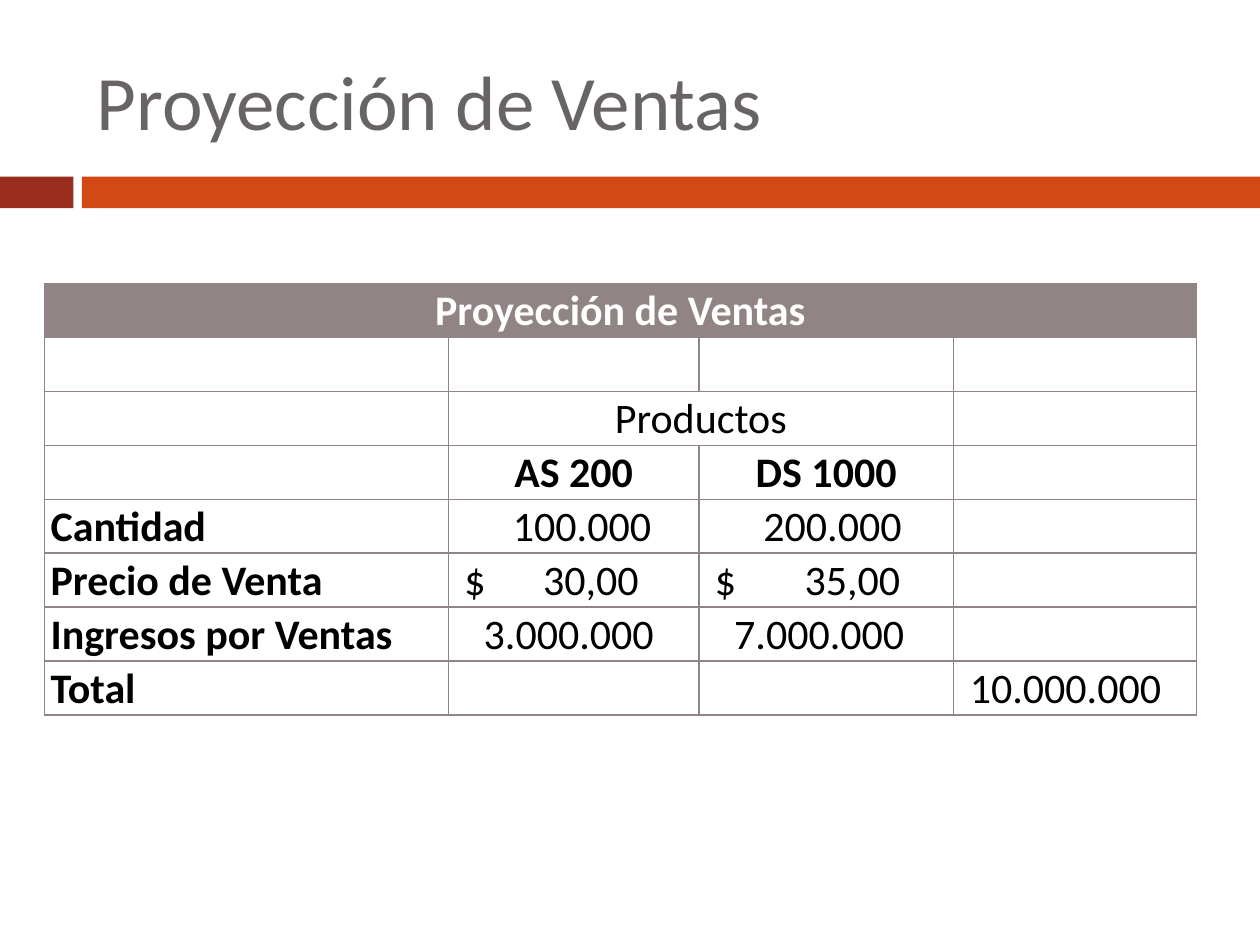
from dataclasses import dataclass

from lxml import etree
from pptx import Presentation
from pptx.dml.color import RGBColor
from pptx.enum.shapes import MSO_SHAPE
from pptx.enum.text import MSO_ANCHOR, PP_ALIGN
from pptx.oxml.ns import qn
from pptx.util import Cm, Pt

RECT = MSO_SHAPE.RECTANGLE
MIDDLE, BOTTOM = MSO_ANCHOR.MIDDLE, MSO_ANCHOR.BOTTOM
LEFT, CENTER = PP_ALIGN.LEFT, PP_ALIGN.CENTER


@dataclass(frozen=True)
class Theme:
    """Hold the colours, font and type sizes."""
    font: str = "Calibri"
    title: str = "696464"
    dark: str = "9B2D1F"
    warm: str = "D34817"
    grid: str = "918485"
    ink: str = "000000"
    paper: str = "FFFFFF"
    head: int = 44
    body: int = 24
    line: float = 0.79


THEME = Theme()
WIDTHS = (8.15, 5.05, 5.13, 4.9)
ROWS = (
    ("Proyección de Ventas", "", "", ""),
    ("", "", "", ""),
    ("", "Productos", "", ""),
    ("", "AS 200", "DS 1000", ""),
    ("Cantidad", "100.000", "200.000", ""),
    ("Precio de Venta", " $\t30,00", " $\t35,00", ""),
    ("Ingresos por Ventas", "3.000.000", "7.000.000", ""),
    ("Total", "", "", "10.000.000"),
)
HEADS = ((0, 0), (2, 1), (3, 1), (3, 2))
INDENTS = {4: 1.17, 6: 0.58, 7: 0.2}
TABS = {1: 1.78, 2: 2.0}


def style(para, size, color, bold=False):
    """Format every run of a paragraph."""
    for run in para.runs:
        font = run.font
        font.name, font.size, font.bold = THEME.font, Pt(size), bold
        font.color.rgb = RGBColor.from_string(color)


def add_title(slide, box, text):
    """Place and format the title in its box."""
    title = slide.shapes.title
    title.left, title.top, title.width, title.height = map(Cm, box)
    frame = title.text_frame
    frame.text = text
    frame.vertical_anchor = MIDDLE
    frame.paragraphs[0].alignment = LEFT
    style(frame.paragraphs[0], THEME.head, THEME.title)


def add_band(slide, box):
    """Draw the short and long bars across a box."""
    left, top, width, height = box
    short, start = 1.48, 1.65
    bars = ((0, short, THEME.dark), (start, width - start, THEME.warm))
    for shift, size, color in bars:
        bar = slide.shapes.add_shape(
            RECT, Cm(left + shift), Cm(top), Cm(size), Cm(height))
        bar.shadow.inherit = False
        bar.fill.solid()
        bar.fill.fore_color.rgb = RGBColor.from_string(color)
        bar.line.fill.background()


def add_edges(cell):
    """Rule the four sides of a cell."""
    props = cell._tc.get_or_add_tcPr()
    for spot, side in enumerate(("lnL", "lnR", "lnT", "lnB")):
        line = etree.Element(qn(f"a:{side}"), w=str(Pt(THEME.line)))
        fill = etree.SubElement(line, qn("a:solidFill"))
        etree.SubElement(fill, qn("a:srgbClr"), val=THEME.grid)
        props.insert(spot, line)


def set_offset(para, row, col):
    """Indent a number, or set the tab of a price."""
    props = para._p.get_or_add_pPr()
    if "\t" in para.text:
        tabs = etree.SubElement(props, qn("a:tabLst"))
        etree.SubElement(tabs, qn("a:tab"), pos=str(Cm(TABS[col])), algn="l")
    elif row in INDENTS:
        props.set("marL", str(Cm(INDENTS[row])))


def fill_cell(cell, text, row, col):
    """Set the text and look of one cell."""
    cell.margin_left = cell.margin_right = Cm(0.13)
    cell.margin_top = cell.margin_bottom = 0
    cell.vertical_anchor = BOTTOM
    if row == 0:
        cell.fill.solid()
        cell.fill.fore_color.rgb = RGBColor.from_string(THEME.grid)
    else:
        cell.fill.background()
    add_edges(cell)
    if not text:
        return
    cell.text_frame.text = text
    para = cell.text_frame.paragraphs[0]
    para.alignment = CENTER if (row, col) in HEADS else LEFT
    if col > 0:
        set_offset(para, row, col)
    color = THEME.paper if row == 0 else THEME.ink
    style(para, THEME.body, color, col == 0 or row == 3)


def add_sales(slide, box):
    """Build the sales table in its box."""
    height = box[3]
    table = slide.shapes.add_table(
        len(ROWS), len(WIDTHS), *map(Cm, box)).table
    table.first_row = table.horz_banding = False
    for col, width in zip(table.columns, WIDTHS):
        col.width = Cm(width)
    for row in table.rows:
        row.height = Cm(height / len(ROWS))
    for r, texts in enumerate(ROWS):
        for c, text in enumerate(texts):
            fill_cell(table.cell(r, c), text, r, c)
    table.cell(0, 0).merge(table.cell(0, 3))
    table.cell(2, 1).merge(table.cell(2, 2))


def main():
    """Build and save the slide."""
    deck = Presentation()
    deck.slide_width, deck.slide_height = Cm(25.4), Cm(19.05)
    slide = deck.slides.add_slide(deck.slide_layouts[5])
    add_band(slide, (0, 3.56, 25.4, 0.64))
    add_title(slide, (1.7, 0.64, 22.66, 2.74), "Proyección de Ventas")
    add_sales(slide, (0.89, 5.71, sum(WIDTHS), 8.71))
    deck.save("out.pptx")


if __name__ == "__main__":
    main()
